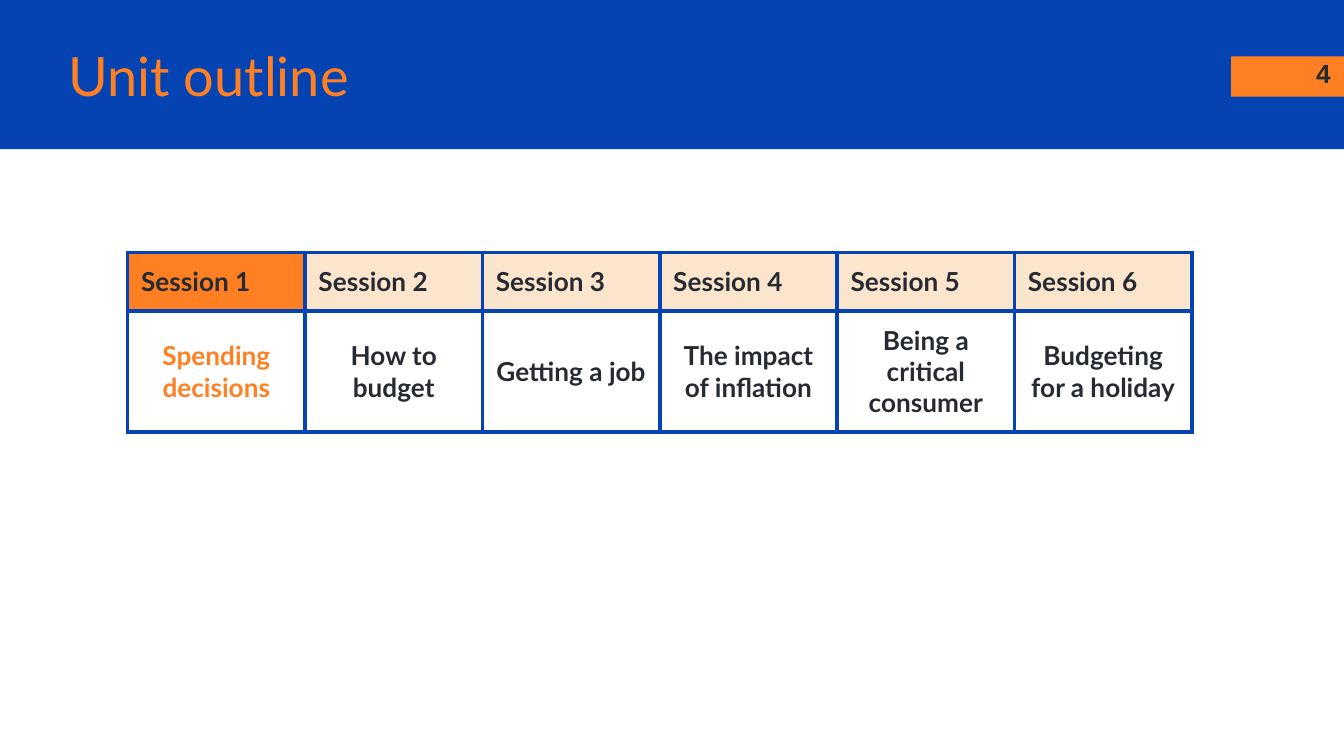
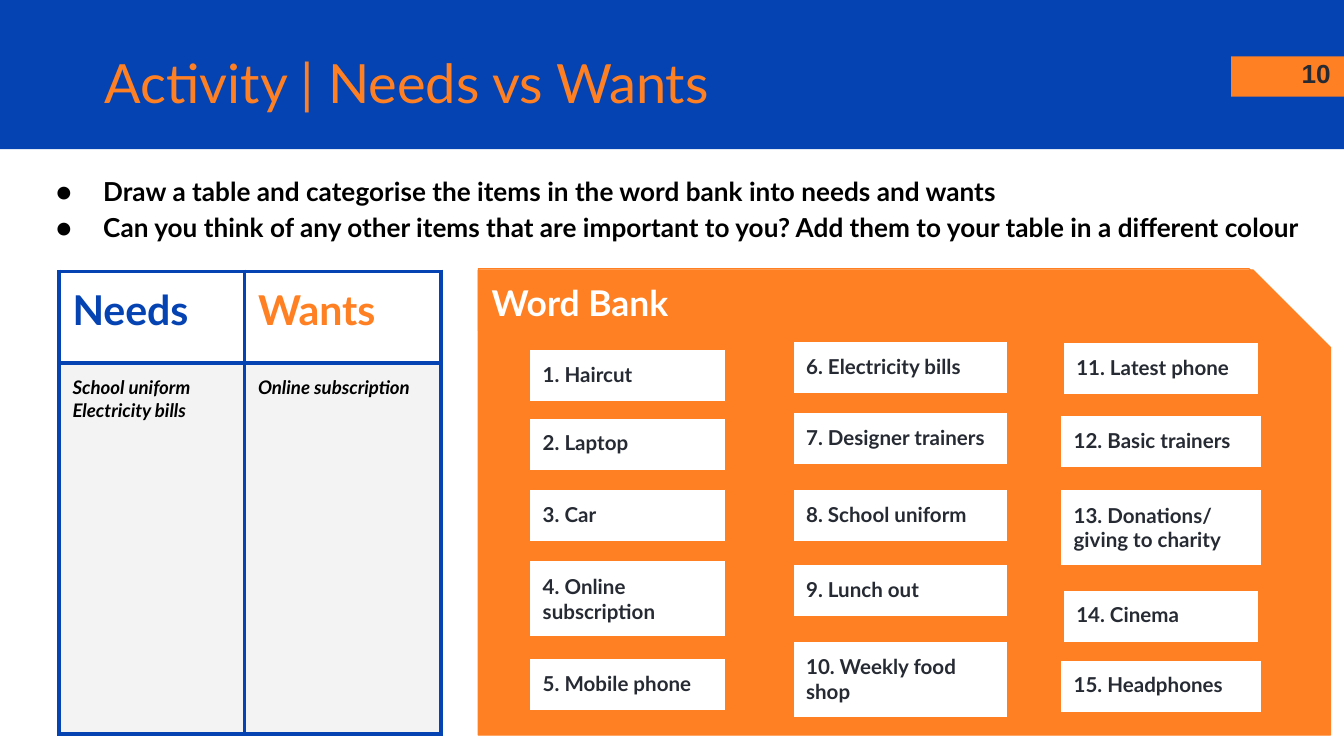
from dataclasses import dataclass
from typing import NamedTuple, Optional

from lxml import etree
from pptx import Presentation
from pptx import util as u
from pptx.dml.color import RGBColor
from pptx.enum import shapes, text
from pptx.oxml import ns


@dataclass(frozen=True)
class Theme:
    blue: str = "0543B3"
    orange: str = "FF8022"
    peach: str = "FCE5CD"
    grey: str = "F3F3F3"
    ink: str = "262A33"
    black: str = "000000"
    white: str = "FFFFFF"
    font: str = "Lato"
    number_font: str = "Arial"
    title: int = 29
    heading: int = 22
    bank_heading: int = 19
    body: int = 14
    card: int = 11
    example: int = 10
    inset: float = 0.1
    border: float = 2.25
    outline: float = 0.75


THEME = Theme()


class Box(NamedTuple):
    left: float
    top: float
    width: float
    height: float

    def lengths(self) -> list:
        return [u.Inches(value) for value in self]


class Style(NamedTuple):
    size: int
    color: str
    bold: bool = True
    italic: bool = False
    font: str = THEME.font


class Cell(NamedTuple):
    words: str
    style: Style
    fill: Optional[str] = None
    align: text.PP_ALIGN = text.PP_ALIGN.LEFT
    anchor: text.MSO_ANCHOR = text.MSO_ANCHOR.TOP


class Card(NamedTuple):
    label: str
    top: float
    lines: int = 1
    width: Optional[float] = None


class CardColumn(NamedTuple):
    center: float
    width: float
    cards: list


BODY = Style(THEME.body, THEME.ink)
CARD = Style(THEME.card, THEME.ink)
EXAMPLE = Style(THEME.example, THEME.black, italic=True)
CARD_HEIGHTS = {1: 0.39, 2: 0.57}

SESSIONS = [
    "Spending decisions",
    "How to budget",
    "Getting a job",
    "The impact of inflation",
    "Being a critical consumer",
    "Budgeting for a holiday",
]

INSTRUCTIONS = [
    "Draw a table and categorise the items in the word bank into needs and wants",
    "Can you think of any other items that are important to you? "
    "Add them to your table in a different colour",
]

WORD_BANK = [
    CardColumn(4.67, 1.46, [
        Card("Haircut", 2.6),
        Card("Laptop", 3.11),
        Card("Car", 3.64),
        Card("Online subscription", 4.17, lines=2),
        Card("Mobile phone", 4.9),
    ]),
    CardColumn(6.7, 1.6, [
        Card("Electricity bills", 2.54),
        Card("Designer trainers", 3.07),
        Card("School uniform", 3.64),
        Card("Lunch out", 4.2),
        Card("Weekly food shop", 4.77, lines=2),
    ]),
    CardColumn(8.64, 1.5, [
        Card("Latest phone", 2.55, width=1.46),
        Card("Basic trainers", 3.09),
        Card("Donations/ giving to charity", 3.64, lines=2),
        Card("Cinema", 4.39, width=1.46),
        Card("Headphones", 4.91),
    ]),
]


def rgb(color: str) -> RGBColor:
    return RGBColor.from_string(color)


def write(frame, words: str, style: Style, align=text.PP_ALIGN.LEFT) -> None:
    frame.text = words
    frame.word_wrap = True
    for paragraph in frame.paragraphs:
        paragraph.alignment = align
        for run in paragraph.runs:
            run.font.name = style.font
            run.font.size = u.Pt(style.size)
            run.font.bold = style.bold
            run.font.italic = style.italic
            run.font.color.rgb = rgb(style.color)


def pad(holder) -> None:
    holder.margin_left = holder.margin_right = u.Inches(THEME.inset)
    holder.margin_top = holder.margin_bottom = u.Inches(THEME.inset)


def add_block(slide, kind, box: Box, fill: Optional[str], line: Optional[str] = None):
    block = slide.shapes.add_shape(kind, *box.lengths())
    block.shadow.inherit = False
    if fill:
        block.fill.solid()
        block.fill.fore_color.rgb = rgb(fill)
    else:
        block.fill.background()
    if line:
        block.line.color.rgb = rgb(line)
        block.line.width = u.Pt(THEME.outline)
    else:
        block.line.fill.background()
    return block


def add_text(slide, box: Box, words: str, style: Style, align=text.PP_ALIGN.LEFT):
    frame = slide.shapes.add_textbox(*box.lengths()).text_frame
    pad(frame)
    write(frame, words, style, align)
    return frame


def add_page(deck, heading: str, heading_box: Box, number: int):
    slide = deck.slides.add_slide(deck.slide_layouts[5])
    rectangle = shapes.MSO_SHAPE.RECTANGLE
    add_block(slide, rectangle, Box(0, 0, 10, 1.11), THEME.blue)
    add_block(slide, rectangle, Box(9.16, 0.42, 0.84, 0.3), THEME.orange)
    add_text(slide, Box(9.4, 0.33, 0.6, 0.43), str(number),
             BODY._replace(font=THEME.number_font), text.PP_ALIGN.RIGHT)

    title = slide.shapes.title
    title.element.getparent().append(title.element)
    title.left, title.top, title.width, title.height = heading_box.lengths()
    frame = title.text_frame
    pad(frame)
    frame.auto_size = text.MSO_AUTO_SIZE.NONE
    frame.vertical_anchor = text.MSO_ANCHOR.MIDDLE
    write(frame, heading, Style(THEME.title, THEME.orange, bold=False))
    return slide


def add_borders(cell) -> None:
    properties = cell._tc.get_or_add_tcPr()
    for index, side in enumerate(("a:lnL", "a:lnR", "a:lnT", "a:lnB")):
        edge = etree.Element(ns.qn(side), w=str(u.Pt(THEME.border)))
        solid = etree.SubElement(edge, ns.qn("a:solidFill"))
        etree.SubElement(solid, ns.qn("a:srgbClr"), val=THEME.blue)
        properties.insert(index, edge)


def add_grid(slide, left: float, top: float, widths: list, heights: list,
             rows: list) -> None:
    box = Box(left, top, sum(widths), sum(heights))
    grid = slide.shapes.add_table(len(rows), len(widths), *box.lengths()).table
    grid.first_row = grid.horz_banding = False
    for column, width in zip(grid.columns, widths):
        column.width = u.Inches(width)
    for row, height, contents in zip(grid.rows, heights, rows):
        row.height = u.Inches(height)
        for cell, content in zip(row.cells, contents):
            pad(cell)
            cell.vertical_anchor = content.anchor
            write(cell.text_frame, content.words, content.style, content.align)
            if content.fill:
                cell.fill.solid()
                cell.fill.fore_color.rgb = rgb(content.fill)
            else:
                cell.fill.background()
            add_borders(cell)


def add_bullets(slide, box: Box, items: list) -> None:
    frame = add_text(slide, box, "\n".join(items), Style(THEME.body, THEME.black))
    for paragraph in frame.paragraphs:
        properties = paragraph._p.get_or_add_pPr()
        properties.set("marL", str(u.Inches(0.5)))
        properties.set("indent", str(u.Inches(-0.35)))
        color = etree.SubElement(properties, ns.qn("a:buClr"))
        etree.SubElement(color, ns.qn("a:srgbClr"), val=THEME.black)
        etree.SubElement(properties, ns.qn("a:buFont"), typeface=THEME.font)
        etree.SubElement(properties, ns.qn("a:buChar"), char="●")
        paragraph.line_spacing = 1.15


def add_word_bank(slide) -> None:
    snipped = shapes.MSO_SHAPE.SNIP_1_RECTANGLE
    add_block(slide, snipped, Box(3.56, 2.01, 6.34, 3.46), THEME.orange, THEME.orange)

    number = 0
    for column in WORD_BANK:
        for card in column.cards:
            number += 1
            width = card.width or column.width
            box = Box(column.center - width / 2, card.top, width,
                      CARD_HEIGHTS[card.lines])
            frame = add_block(slide, shapes.MSO_SHAPE.RECTANGLE, box,
                              THEME.white, THEME.orange).text_frame
            pad(frame)
            frame.vertical_anchor = text.MSO_ANCHOR.TOP
            write(frame, f"{number}. {card.label}", CARD)
            frame.auto_size = text.MSO_AUTO_SIZE.SHAPE_TO_FIT_TEXT

    heading = add_block(slide, snipped, Box(3.56, 2, 5.81, 0.46), None, THEME.orange)
    pad(heading.text_frame)
    heading.text_frame.vertical_anchor = text.MSO_ANCHOR.MIDDLE
    write(heading.text_frame, "Word Bank", Style(THEME.bank_heading, THEME.white))


def add_outline_slide(deck) -> None:
    slide = add_page(deck, "Unit outline", Box(0.41, 0.28, 8.46, 0.56), 4)
    current = 0
    headings, topics = [], []
    for index, topic in enumerate(SESSIONS):
        active = index == current
        headings.append(Cell(f"Session {index + 1}", BODY,
                             THEME.orange if active else THEME.peach))
        topics.append(Cell(topic, BODY._replace(color=THEME.orange) if active else BODY,
                           align=text.PP_ALIGN.CENTER, anchor=text.MSO_ANCHOR.MIDDLE))
    add_grid(slide, 0.95, 1.88, [1.32] * len(SESSIONS), [0.43, 0.9],
             [headings, topics])


def add_activity_slide(deck) -> None:
    slide = add_page(deck, "Activity | Needs vs Wants", Box(0.68, 0.33, 8.47, 0.56), 10)
    add_bullets(slide, Box(0.17, 1.17, 9.73, 0.71), INSTRUCTIONS)
    add_grid(slide, 0.44, 2.02, [1.38, 1.46], [0.68, 2.76], [
        [Cell("Needs", Style(THEME.heading, THEME.blue)),
         Cell("Wants", Style(THEME.heading, THEME.orange))],
        [Cell("School uniform\nElectricity bills", EXAMPLE, THEME.grey),
         Cell("Online subscription", EXAMPLE, THEME.grey)],
    ])
    add_word_bank(slide)


def main() -> None:
    deck = Presentation()
    deck.slide_width = u.Inches(10)
    deck.slide_height = u.Inches(10) * 9 // 16
    add_outline_slide(deck)
    add_activity_slide(deck)
    deck.save("out.pptx")


if __name__ == "__main__":
    main()
